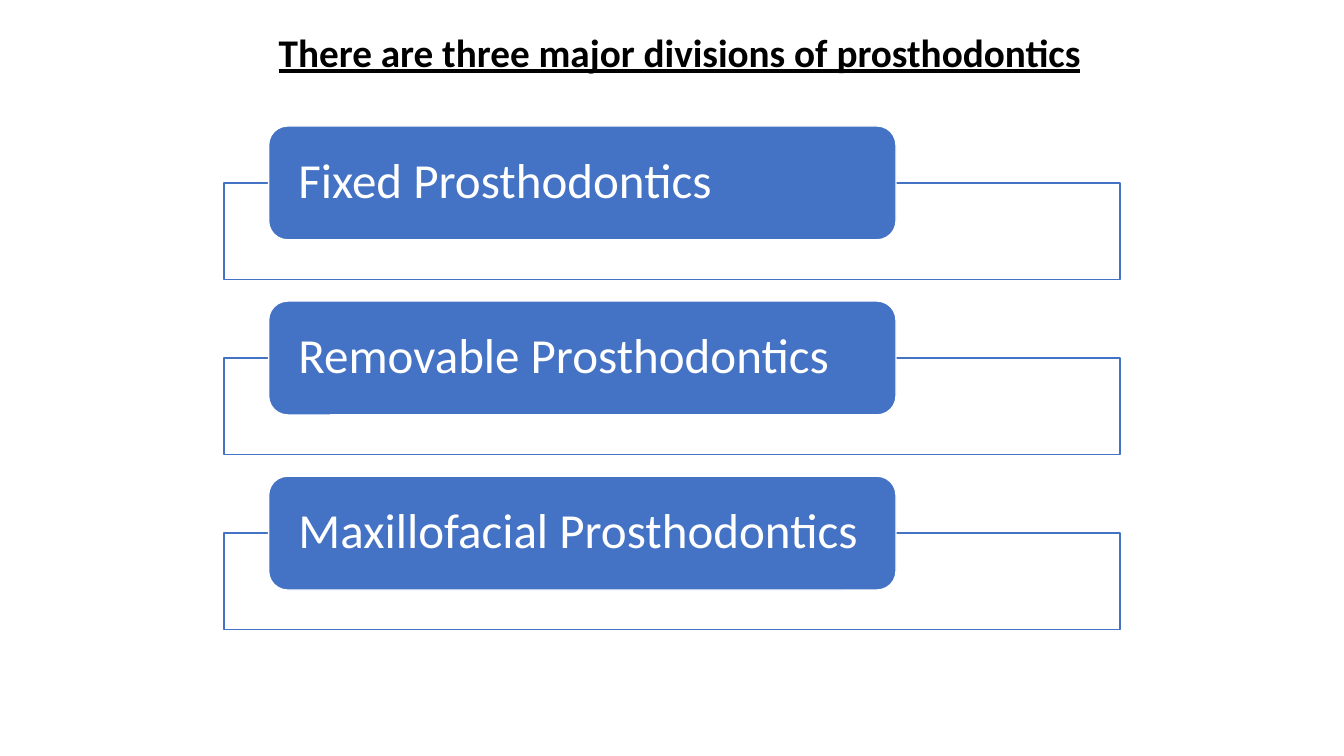
"""Build a slide listing the three major divisions of prosthodontics."""
from pptx import Presentation
from pptx.dml.color import RGBColor
from pptx.enum.shapes import MSO_SHAPE
from pptx.enum.text import MSO_ANCHOR, MSO_AUTO_SIZE, PP_ALIGN
from pptx.util import Inches, Pt

BLUE, WHITE, BLACK = "4472C4", "FFFFFF", "000000"
DIVISIONS = ["Fixed Prosthodontics", "Removable Prosthodontics", "Maxillofacial Prosthodontics"]
FRAME_LEFT, FRAME_WIDTH, FRAME_HEIGHT = 2.22, 8.89, 0.96
LABEL_HEIGHT = 1.13
FIRST_TOP, ROW_PITCH = 1.25, 1.737


def color(hex_code):
    return RGBColor.from_string(hex_code)


def add_block(preset, left, top, width, height, fill, line):
    block = slide.shapes.add_shape(
        preset, Inches(left), Inches(top), Inches(width), Inches(height))
    block.shadow.inherit = False
    block.fill.solid()
    block.fill.fore_color.rgb = color(fill)
    block.line.color.rgb = color(line)
    block.line.width = Pt(1)
    return block


prs = Presentation()
prs.slide_width, prs.slide_height = Inches(13.33), Inches(7.5)
slide = prs.slides.add_slide(prs.slide_layouts.get_by_name("Title Only"))

heading = slide.shapes.title
heading.left, heading.top = Inches(1.41), Inches(0.23)
heading.width, heading.height = Inches(10.66), Inches(0.57)
heading.text_frame.auto_size = MSO_AUTO_SIZE.NONE
heading.text_frame.vertical_anchor = MSO_ANCHOR.TOP
heading_line = heading.text_frame.paragraphs[0]
heading_line.alignment = PP_ALIGN.CENTER
heading_run = heading_line.add_run()
heading_run.text = "There are three major divisions of prosthodontics"
heading_run.font.name, heading_run.font.size = "Calibri", Pt(28)
heading_run.font.bold = heading_run.font.underline = True
heading_run.font.color.rgb = color(BLACK)

for row, division in enumerate(DIVISIONS):
    top = FIRST_TOP + row * ROW_PITCH
    add_block(MSO_SHAPE.RECTANGLE, FRAME_LEFT, top + LABEL_HEIGHT / 2,
              FRAME_WIDTH, FRAME_HEIGHT, WHITE, BLUE)
    label = add_block(MSO_SHAPE.ROUNDED_RECTANGLE, FRAME_LEFT + FRAME_WIDTH * 0.05, top,
                      FRAME_WIDTH * 0.7, LABEL_HEIGHT, BLUE, WHITE)
    frame = label.text_frame
    frame.word_wrap = True
    frame.vertical_anchor = MSO_ANCHOR.MIDDLE
    frame.margin_left = frame.margin_right = Inches(0.24)
    frame.margin_top = frame.margin_bottom = 0
    label_line = frame.paragraphs[0]
    label_line.alignment = PP_ALIGN.LEFT
    label_line.line_spacing = 0.9
    label_run = label_line.add_run()
    label_run.text = division
    label_run.font.name, label_run.font.size = "Calibri", Pt(35)
    label_run.font.color.rgb = color(WHITE)

prs.save("out.pptx")
